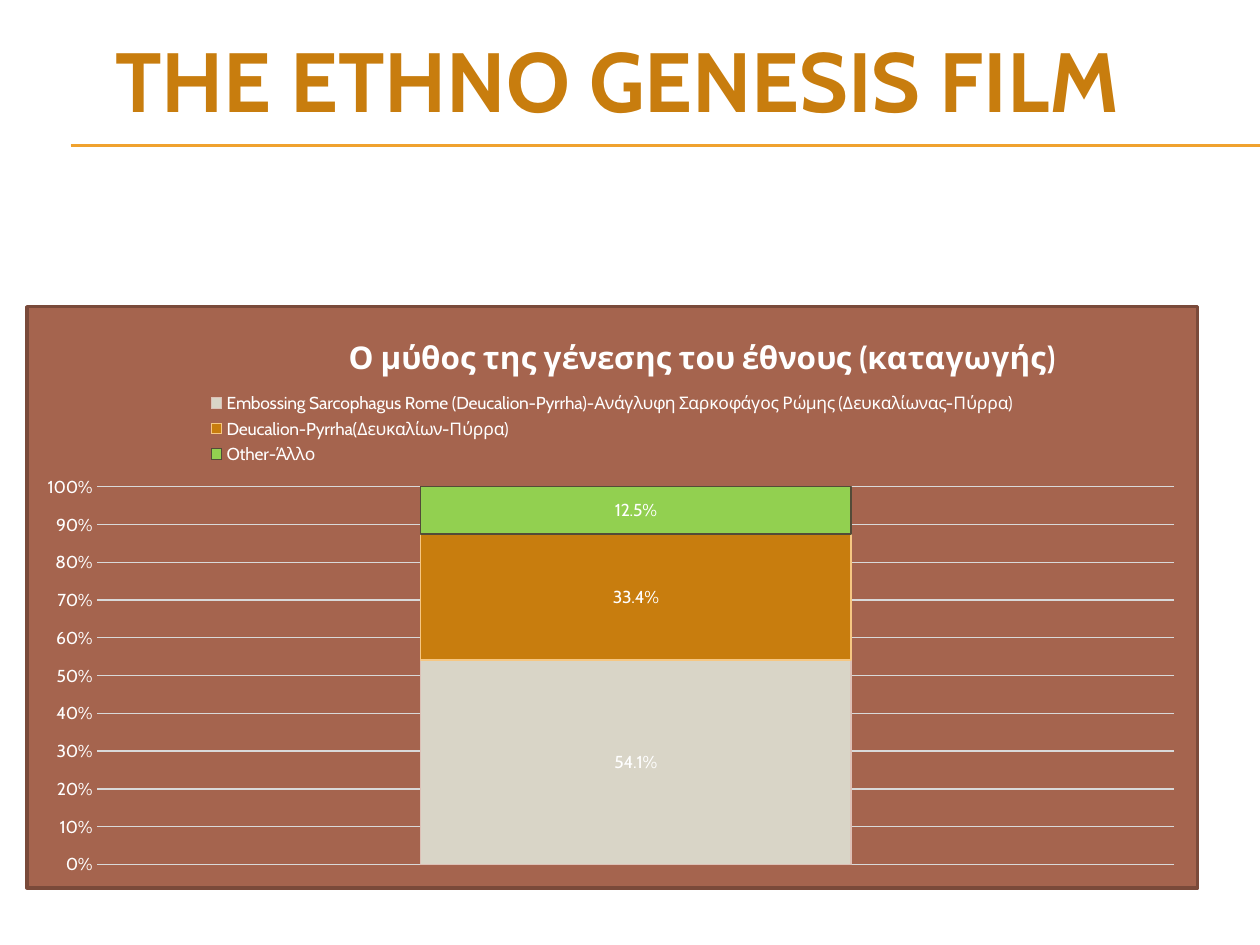
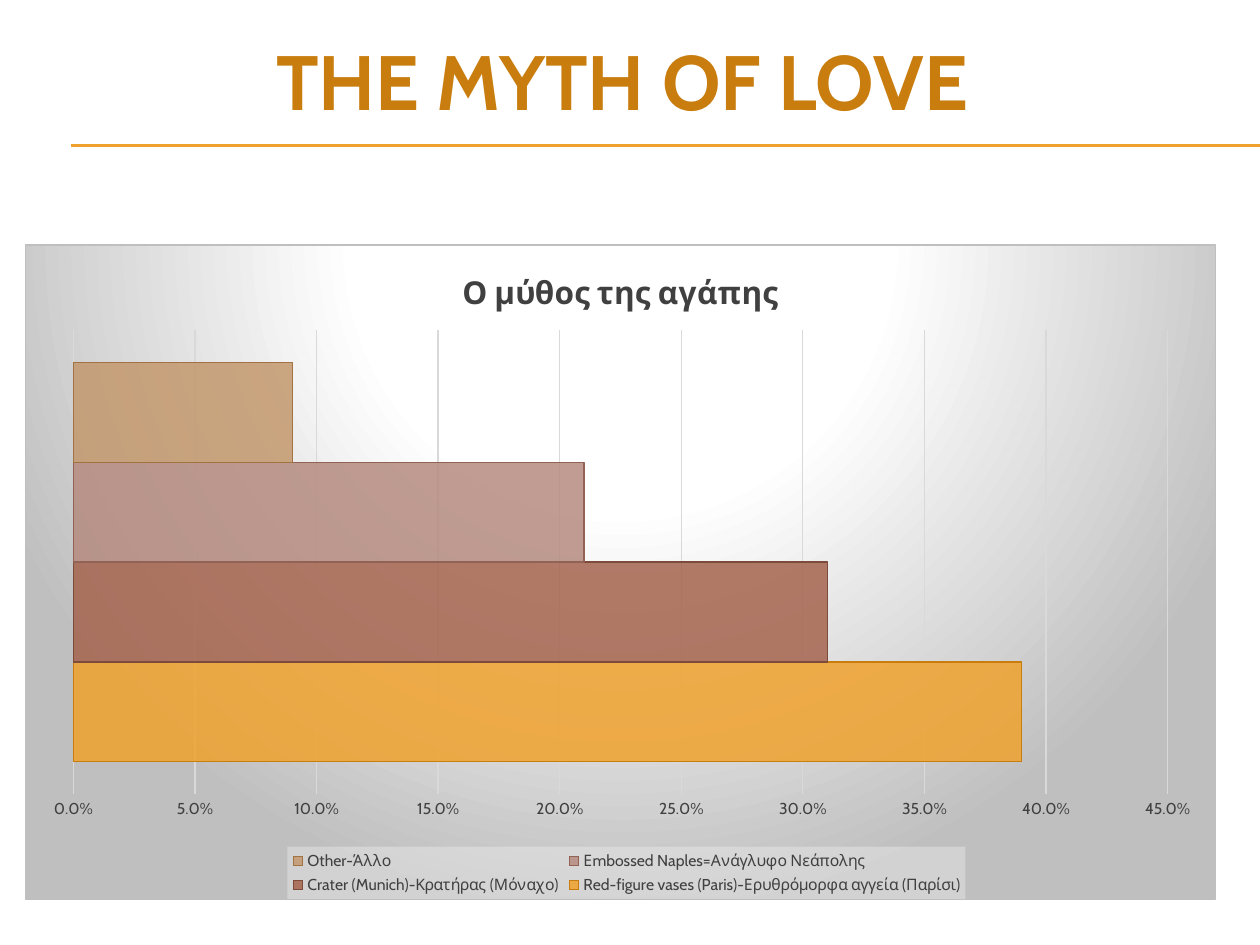
from lxml import etree
from pptx import Presentation
from pptx.chart.data import CategoryChartData
from pptx.dml.color import RGBColor
from pptx.enum.chart import XL_CHART_TYPE, XL_LEGEND_POSITION, XL_TICK_MARK
from pptx.enum.shapes import MSO_CONNECTOR
from pptx.enum.text import MSO_ANCHOR, MSO_AUTO_SIZE, PP_ALIGN
from pptx.oxml import parse_xml
from pptx.oxml.ns import nsdecls, qn
from pptx.util import Inches, Pt

FONT = "Cabin"
GOLD, AMBER, BROWN = "C87D0E", "F0A22E", "A5644E"
WHITE, GRID, DARK = "FFFFFF", "D9D9D9", "404040"


def color(hex_text):
    return RGBColor.from_string(hex_text)


def set_layout(part, before, inner, **shares):
    """Place a chart part by shares of the chart's size."""
    for old in part.findall(qn("c:layout")):
        part.remove(old)
    target = '<c:layoutTarget val="inner"/>' if inner else ""
    modes = "".join(f'<c:{side}Mode val="edge"/>' for side in "xy")
    values = "".join(f'<c:{side} val="{share}"/>' for side, share in shares.items())
    layout = parse_xml(f'<c:layout {nsdecls("c")}><c:manualLayout>{target}{modes}'
                       f'{values}</c:manualLayout></c:layout>')
    if before is None:
        part.insert(0, layout)
    else:
        part.find(qn(before)).addprevious(layout)


brown_fill = f'<a:solidFill><a:srgbClr val="{BROWN}"/></a:solidFill>'
grey_fill = (
    '<a:gradFill><a:gsLst>'
    + "".join(f'<a:gs pos="{stop * 1000}"><a:srgbClr val="{tone}"/></a:gs>'
              for stop, tone in [(0, WHITE), (39, WHITE), (100, "BFBFBF")])
    + '</a:gsLst><a:path path="circle">'
      '<a:fillToRect l="50000" t="-80000" r="50000" b="180000"/></a:path></a:gradFill>')

# What differs from slide to slide
myths = [
    dict(
        title="THE ETHNO GENESIS FILM", title_size=48, title_box=(0, 0, 9.8, 1.25),
        chart_title="Ο μύθος της γένεσης του έθνους (καταγωγής)",
        kind=XL_CHART_TYPE.COLUMN_STACKED_100, chart_box=(0.2, 2.42, 9.32, 4.64),
        text=WHITE, size=10, fill=brown_fill, border=("7A4A3A", 2),
        top=1, step=0.1, axis_format="0%", gap=150, overlap=100, labels=True,
        legend=XL_LEGEND_POSITION.TOP, legend_fill=None, opacity=100,
        title_at=dict(x=0.27, y=0.04),
        plot_at=dict(x=0.06, y=0.31, w=0.92, h=0.65),
        legend_at=dict(x=0.15, y=0.14, w=0.7, h=0.14),
        series=[
            ("Embossing Sarcophagus Rome (Deucalion-Pyrrha)-Ανάγλυφη Σαρκοφάγος "
             "Ρώμης (Δευκαλίωνας-Πύρρα)", 0.541, "D9D5C7", "DDC0B6"),
            ("Deucalion-Pyrrha(Δευκαλίων-Πύρρα)", 0.334, GOLD, "F6C782"),
            ("Other-Άλλο", 0.125, "92D050", "534B38"),
        ]),
    dict(
        title="THE MYTH OF LOVE", title_size=44, title_box=(0, 0.01, 9.88, 1.25),
        chart_title="Ο μύθος της αγάπης",
        kind=XL_CHART_TYPE.BAR_CLUSTERED, chart_box=(0.2, 1.94, 9.45, 5.2),
        text=DARK, size=9, fill=grey_fill, border=("BFBFBF", 0.75),
        top=0.45, step=0.05, axis_format="0.0%", gap=65, overlap=0, labels=False,
        legend=XL_LEGEND_POSITION.BOTTOM, legend_fill="F2F2F2", opacity=85,
        title_at=None,
        plot_at=dict(x=0.04, y=0.13, w=0.92, h=0.71),
        legend_at=dict(x=0.22, y=0.92, w=0.57, h=0.08),
        series=[
            ("Red-figure vases (Paris)-Ερυθρόμορφα αγγεία (Παρίσι)", 0.39, AMBER, GOLD),
            ("Crater (Munich)-Κρατήρας (Μόναχο)", 0.31, BROWN, "7C4B3B"),
            ("Εmbossed Naples=Ανάγλυφο Νεάπολης", 0.21, "B58B80", "926255"),
            ("Other-Άλλο", 0.09, "C3986D", "A27242"),
        ]),
]

prs = Presentation()
prs.slide_width, prs.slide_height = Inches(10), Inches(7.5)
title_only = prs.slide_layouts[5]

for number, myth in enumerate(myths):
    slide = prs.slides.add_slide(title_only)

    # Double rule under the title, kept on the shared layout
    if number == 0:
        for rule_id, y in ((101, 1.15), (102, 1.16)):
            rule = slide.shapes.add_connector(
                MSO_CONNECTOR.STRAIGHT, Inches(0.56), Inches(y), prs.slide_width, Inches(y))
            rule.line.color.rgb = color(AMBER)
            rule.line.width = Pt(0.75)
            etree.SubElement(rule.element.spPr, qn("a:effectLst"))
            rule.element[0][0].set("id", str(rule_id))
            title_only.shapes.element.append(rule.element)

    # Title
    title = slide.shapes.title
    title.left, title.top, title.width, title.height = map(Inches, myth["title_box"])
    heading = title.text_frame
    heading.text = myth["title"]
    for key, value in dict(word_wrap=True, auto_size=MSO_AUTO_SIZE.NONE,
                           vertical_anchor=MSO_ANCHOR.MIDDLE).items():
        setattr(heading, key, value)
    heading.paragraphs[0].alignment = PP_ALIGN.CENTER
    heading_font = heading.paragraphs[0].runs[0].font
    for key, value in dict(name=FONT, size=Pt(myth["title_size"]), bold=True).items():
        setattr(heading_font, key, value)
    heading_font.color.rgb = color(GOLD)
    next(title.element.iter(qn("a:rPr"))).insert(0, parse_xml(
        f'<a:ln {nsdecls("a")} w="12700"><a:solidFill><a:srgbClr val="563928"/>'
        '</a:solidFill></a:ln>'))

    # Chart and its background
    shares = CategoryChartData(number_format="0.0%")
    shares.categories = ["1"]
    for name, share, _, _ in myth["series"]:
        shares.add_series(name, [share])
    chart = slide.shapes.add_chart(
        myth["kind"], *map(Inches, myth["chart_box"]), shares).chart
    chart_body = chart.element.find(qn("c:chart"))
    border_color, border_width = myth["border"]
    chart_body.addnext(parse_xml(
        f'<c:spPr {nsdecls("c", "a")}>{myth["fill"]}<a:ln w="{Pt(border_width)}">'
        f'<a:solidFill><a:srgbClr val="{border_color}"/></a:solidFill></a:ln></c:spPr>'))

    # Chart title
    chart.has_title = True
    chart.chart_title.text_frame.text = myth["chart_title"]
    caption = chart.chart_title.text_frame.paragraphs[0].runs[0].font
    caption.bold = True

    # Legend
    chart.has_legend = True
    legend = chart.legend
    legend.position = myth["legend"]
    legend.include_in_layout = False
    for font, size in ((chart.font, myth["size"]), (caption, 18),
                       (legend.font, myth["size"])):
        font.name, font.size = FONT, Pt(size)
        font.color.rgb = color(myth["text"])
    legend_part = chart_body.find(qn("c:legend"))
    if myth["legend_fill"]:
        legend_part.find(qn("c:overlay")).addnext(parse_xml(
            f'<c:spPr {nsdecls("c", "a")}><a:solidFill><a:srgbClr val="{myth["legend_fill"]}">'
            '<a:alpha val="39000"/></a:srgbClr></a:solidFill></c:spPr>'))

    # Axes and gridlines
    chart.category_axis.visible = False
    axis = chart.value_axis
    for key, value in dict(minimum_scale=0, maximum_scale=myth["top"],
                           major_unit=myth["step"], has_major_gridlines=True,
                           major_tick_mark=XL_TICK_MARK.NONE,
                           minor_tick_mark=XL_TICK_MARK.NONE).items():
        setattr(axis, key, value)
    axis.tick_labels.number_format = myth["axis_format"]
    axis.tick_labels.number_format_is_linked = False
    axis.format.line.fill.background()
    axis.major_gridlines.format.line.color.rgb = color(GRID)
    axis.major_gridlines.format.line.width = Pt(0.75)

    # Series
    plot = chart.plots[0]
    plot.vary_by_categories = False
    plot.gap_width, plot.overlap = myth["gap"], myth["overlap"]
    for series, (_, _, fill, outline) in zip(plot.series, myth["series"]):
        series.format.fill.solid()
        series.format.fill.fore_color.rgb = color(fill)
        series.format.line.color.rgb = color(outline)
        series.format.line.width = Pt(0.75)
    if myth["opacity"] < 100:
        for part in chart_body.iter(qn("c:ser")):
            tone = part.find(f'{qn("c:spPr")}/{qn("a:solidFill")}/{qn("a:srgbClr")}')
            etree.SubElement(tone, qn("a:alpha"), val=str(myth["opacity"] * 1000))
    if myth["labels"]:
        plot.has_data_labels = True
        for key, value in dict(show_value=True, number_format="0.0%",
                               number_format_is_linked=False).items():
            setattr(plot.data_labels, key, value)
        plot.data_labels.font.size = Pt(myth["size"])
        plot.data_labels.font.color.rgb = color(myth["text"])

    # Places inside the chart
    set_layout(chart_body.find(qn("c:plotArea")), None, True, **myth["plot_at"])
    set_layout(legend_part, "c:overlay", False, **myth["legend_at"])
    if myth["title_at"]:
        set_layout(chart_body.find(qn("c:title")), "c:overlay", False, **myth["title_at"])

prs.save("out.pptx")
